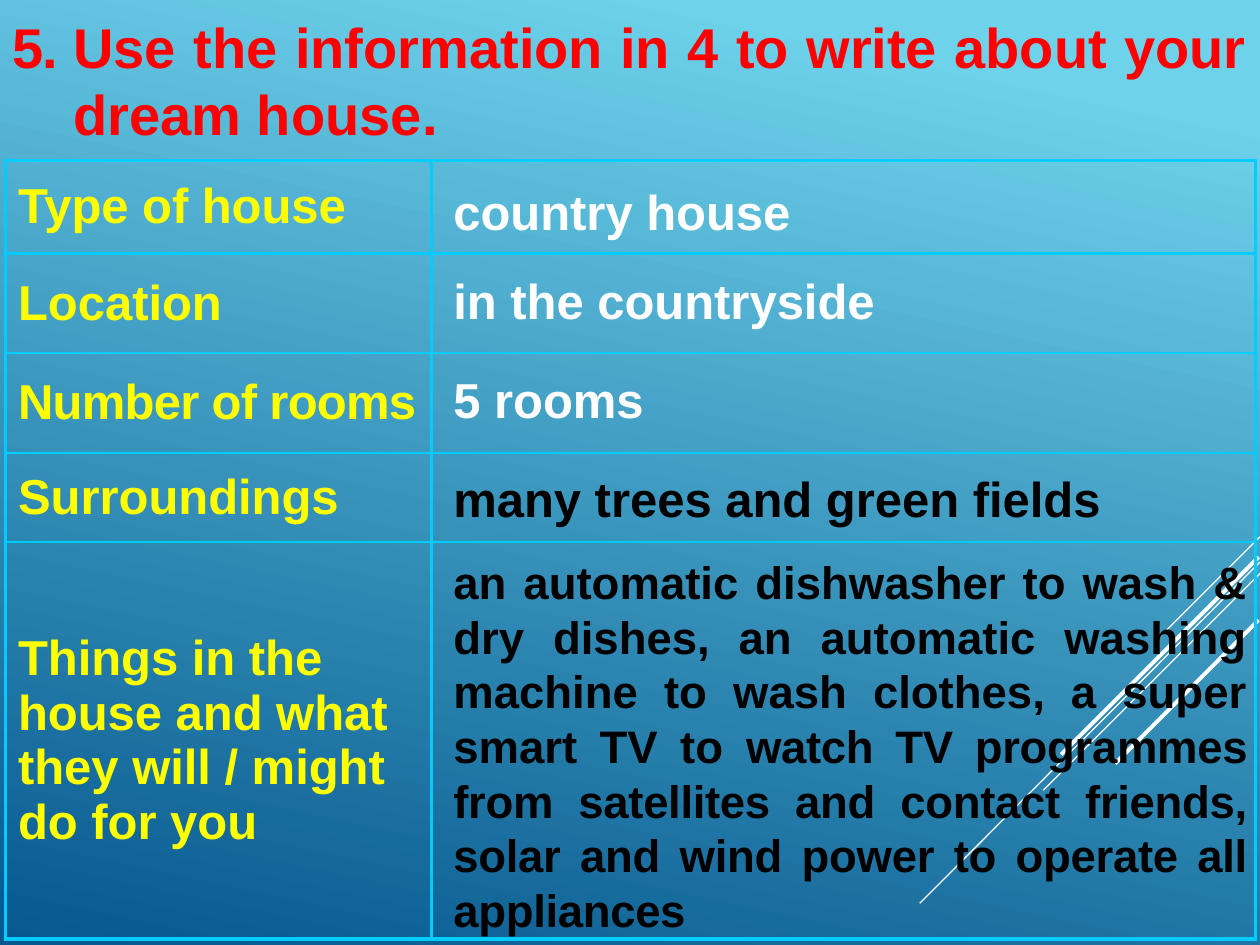
"""Build the dream house slide with its table of ideas."""
from lxml.etree import SubElement as Sub
from pptx import Presentation
from pptx.dml.color import RGBColor as RGB
from pptx.enum.shapes import MSO_CONNECTOR as Link
from pptx.enum.text import MSO_ANCHOR as Anchor, MSO_AUTO_SIZE as Auto, PP_ALIGN as Align
from pptx.oxml.ns import qn
from pptx.util import Cm, Pt

COLS = {"sky": "6ED2EB", "deep": "06588E", "white": "FFFFFF", "red": "FF0000",
        "yellow": "FFFF00", "black": "000000", "edge": "00CCFF"}


def style(para, size, col):
    font = para.font
    font.name, font.size, font.bold = "Arial", Pt(size), True
    font.color.rgb = RGB.from_string(COLS[col])


def write(spot, runs, size, col, align=Align.LEFT):
    box = slide.shapes.add_textbox(*[Cm(n) for n in spot])
    frame = box.text_frame
    frame.word_wrap = True
    frame.auto_size = Auto.SHAPE_TO_FIT_TEXT
    para = frame.paragraphs[0]
    para.alignment = align
    for text, space in runs:
        run = para.add_run()
        run.text = text
        if space:
            run._r.get_or_add_rPr().set("spc", str(space))
    style(para, size, col)
    return para


deck = Presentation()
deck.slide_width, deck.slide_height = Cm(25.4), Cm(19.05)
slide = deck.slides.add_slide(deck.slide_layouts[6])

fill = slide.background.fill
fill.gradient()
fill.gradient_angle = 258
for stop, col, pos in zip(fill.gradient_stops, ("sky", "deep"), (0.1, 1)):
    stop.color.rgb = RGB.from_string(COLS[col])
    stop.position = pos

rays = [(25.4, 10.82, 23.29, 12.93, 0.75), (25.4, 11.33, 18.54, 18.21, 0.75),
        (25.4, 11.56, 21.03, 15.93, 0.75), (25.37, 11.23, 21.39, 15.21, 2.25),
        (25.37, 12.5, 22.48, 15.39, 2.25)]
for *ends, width in rays:
    ray = slide.shapes.add_connector(Link.STRAIGHT, *[Cm(n) for n in ends])
    ray.line.color.rgb = RGB.from_string(COLS["white"])
    ray.line.width = Pt(width)
    Sub(ray._element.spPr, qn("a:effectLst"))

title = write((0, 0.13, 25.4, 3),
              [("5.\t", -40), ("Use the information in 4 to write about your dream house", 0),
               (".", -40)], 32, "red", Align.JUSTIFY)
props = title._p.get_or_add_pPr()
props.set("marL", str(Cm(1.23)))
props.set("indent", str(Cm(-1.23)))

labels = ["Type of house", "Location", "Number of rooms", "Surroundings",
          "Things in the house and what they will / might do for you"]
wide = [8.59, 16.61]
high = [1.88, 2.01, 2.01, 1.8, 8]
last = len(labels) - 1
table = slide.shapes.add_table(len(labels), 2, Cm(0.11), Cm(3.23),
                               Cm(sum(wide)), Cm(sum(high))).table
table.first_row = table.horz_banding = False
for col, width in zip(table.columns, wide):
    col.width = Cm(width)
for r, (label, height) in enumerate(zip(labels, high)):
    table.rows[r].height = Cm(height)
    for c in range(2):
        cell = table.cell(r, c)
        cell.vertical_anchor = Anchor.MIDDLE
        outer = {"L": c == 0, "R": c == 1, "T": r == 0, "B": r == last}
        for side, thick in outer.items():
            line = Sub(cell._tc.get_or_add_tcPr(), qn("a:ln" + side),
                       w=str(Pt(2.25 if thick else 1.5)))
            Sub(Sub(line, qn("a:solidFill")), qn("a:srgbClr"), val=COLS["edge"])
        cell.fill.background()
    cell = table.cell(r, 0)
    cell.text = label
    para = cell.text_frame.paragraphs[0]
    style(para, 28, "yellow")
    if label == "Number of rooms":
        para.runs[0]._r.get_or_add_rPr().set("spc", "-40")

notes = [("in the countryside", 5.33, 10.87, "white"),
         ("country house", 3.53, 8.66, "white"),
         ("5 rooms", 7.32, 5.44, "white"),
         ("many trees and green fields", 9.32, 14.78, "black")]
for text, top, width, col in notes:
    write((8.89, top, width, 1.45), [(text, 0)], 28, col)

write((8.89, 11.05, 16.51, 8),
      [("an automatic dishwasher to wash & dry dishes, an automatic washing machine "
        "to wash clothes, a super smart TV to ", 0),
       ("watch TV programmes from satellites and contact friends, solar and wind power "
        "to operate all appliances", -20)], 26, "black", Align.JUSTIFY)

deck.save("out.pptx")
